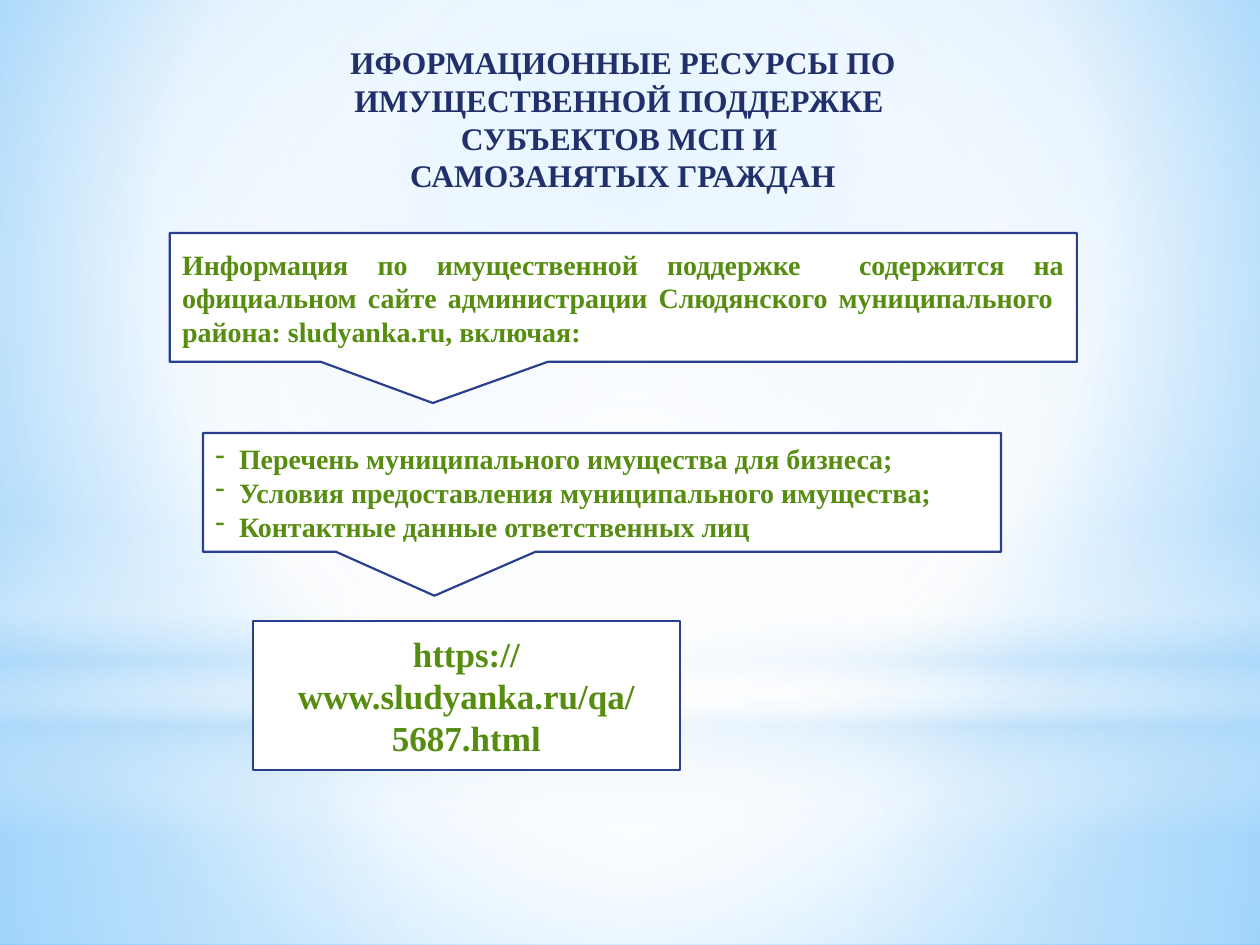
from lxml.etree import SubElement
from pptx import Presentation
from pptx.dml.color import RGBColor
from pptx.enum.shapes import MSO_SHAPE
from pptx.enum.text import MSO_ANCHOR, PP_ALIGN
from pptx.oxml import parse_xml
from pptx.oxml.ns import nsdecls, qn
from pptx.util import Pt

WIDE, HIGH = 720, 540
FONT = "Times New Roman"
HUES = {"white": "FFFFFF", "pale": "B4DCFA", "sky": "9ED5FF", "blue": "5BB9FF",
        "navy": "21306A", "edge": "2A3E8E", "green": "568D11"}


def hue(name):
    return RGBColor.from_string(HUES[name])


def fade(stops, rect=None):
    """Gradient XML from (position, hue, opacity); linear downwards without rect."""
    marks = "".join(
        f'<a:gs pos="{pos * 1000}"><a:srgbClr val="{HUES[name]}">'
        f'<a:alpha val="{seen * 1000}"/></a:srgbClr></a:gs>'
        for pos, name, seen in stops)
    if rect:
        sides = " ".join(f'{k}="{v * 1000}"' for k, v in zip("ltrb", rect))
        way = f'<a:path path="circle"><a:fillToRect {sides}/></a:path>'
    else:
        way = '<a:lin ang="5400000" scaled="0"/>'
    return parse_xml(f'<a:gradFill {nsdecls("a")} rotWithShape="1">'
                     f'<a:gsLst>{marks}</a:gsLst>{way}</a:gradFill>')


def add_glow(slide, kind, box, stops, rect=None):
    shape = slide.shapes.add_shape(kind, *map(Pt, box))
    shape.shadow.inherit = False
    shape.line.fill.background()
    geom = shape._element.spPr.find(qn("a:prstGeom"))
    geom.addnext(fade(stops, rect))


def add_sky(slide):
    """Background gradient with soft light over it and a horizon."""
    slide.background.fill.solid()
    back = slide._element.cSld.bg.bgPr
    back.replace(back[0], fade(
        [(0, "sky", 100), (60, "white", 100), (100, "blue", 100)], (20, 10, 20, 60)))
    mid = (50, 50, 50, 50)
    split = 402
    add_glow(slide, MSO_SHAPE.RECTANGLE, (0, split, WIDE, HIGH - split),
             [(0, "white", 91), (37, "white", 76), (100, "pale", 79)], mid)
    add_glow(slide, MSO_SHAPE.RECTANGLE, (0, 0, WIDE, split),
             [(0, "white", 89), (48, "white", 62), (100, "pale", 79)], mid)
    add_glow(slide, MSO_SHAPE.RECTANGLE, (0, 297, WIDE, 180),
             [(0, "white", 0), (29, "white", 30), (45, "pale", 40),
              (55, "white", 26), (65, "pale", 60), (100, "white", 0)])
    add_glow(slide, MSO_SHAPE.OVAL, (0, 126, WIDE, split),
             [(0, "white", 100), (56, "white", 0)], mid)


def write(frame, lines, size, tint, align):
    frame.word_wrap = True
    for i, line in enumerate(lines):
        para = frame.paragraphs[0] if i == 0 else frame.add_paragraph()
        para.alignment = align
        run = para.add_run()
        run.text = line
        font = run.font
        font.name, font.size, font.bold = FONT, Pt(size), True
        font.color.rgb = hue(tint)


def add_title(slide, box, lines):
    frame = slide.shapes.add_textbox(*map(Pt, box)).text_frame
    write(frame, lines, 18, "navy", PP_ALIGN.CENTER)


def add_panel(slide, box, lines, size, align, tip=None):
    """White framed box; tip makes it a callout pointing there."""
    kind = MSO_SHAPE.RECTANGULAR_CALLOUT if tip else MSO_SHAPE.RECTANGLE
    shape = slide.shapes.add_shape(kind, *map(Pt, box))
    shape.shadow.inherit = False
    for i, part in enumerate(tip or ()):
        shape.adjustments[i] = part
    shape.fill.solid()
    shape.fill.fore_color.rgb = hue("white")
    shape.line.color.rgb = hue("edge")
    shape.line.width = Pt(1.25)
    shape.text_frame.vertical_anchor = MSO_ANCHOR.MIDDLE
    write(shape.text_frame, lines, size, "green", align)
    return shape


def add_dashes(frame):
    for para in frame.paragraphs:
        props = para._p.get_or_add_pPr()
        props.set("marL", str(Pt(13.5)))
        props.set("indent", str(-Pt(13.5)))
        SubElement(props, qn("a:buFontTx"))
        SubElement(props, qn("a:buChar")).set("char", "-")


def main():
    deck = Presentation()
    deck.slide_width, deck.slide_height = Pt(WIDE), Pt(HIGH)
    slide = deck.slides.add_slide(deck.slide_layouts[6])
    add_sky(slide)
    add_title(slide, (109.5, 21, 493, 94.5), [
        "ИФОРМАЦИОННЫЕ РЕСУРСЫ ПО ИМУЩЕСТВЕННОЙ ПОДДЕРЖКЕ ",
        "СУБЪЕКТОВ МСП И ",
        "САМОЗАНЯТЫХ ГРАЖДАН"])
    add_panel(slide, (97, 133.2, 518.4, 73.6), [
        "Информация по имущественной поддержке  содержится на официальном сайте "
        "администрации Слюдянского муниципального  района: sludyanka.ru, включая:"],
        16, PP_ALIGN.JUSTIFY, (-0.21, 0.82))
    items = add_panel(slide, (116, 247.4, 456, 67.9), [
        "Перечень муниципального имущества для бизнеса;",
        "Условия предоставления муниципального имущества;",
        "Контактные данные ответственных лиц"],
        16, PP_ALIGN.LEFT, (-0.21, 0.87))
    add_dashes(items.text_frame)
    add_panel(slide, (144.6, 355, 243.8, 85),
              ["https://www.sludyanka.ru/qa/5687.html"], 20, PP_ALIGN.CENTER)
    deck.save("out.pptx")


if __name__ == "__main__":
    main()
